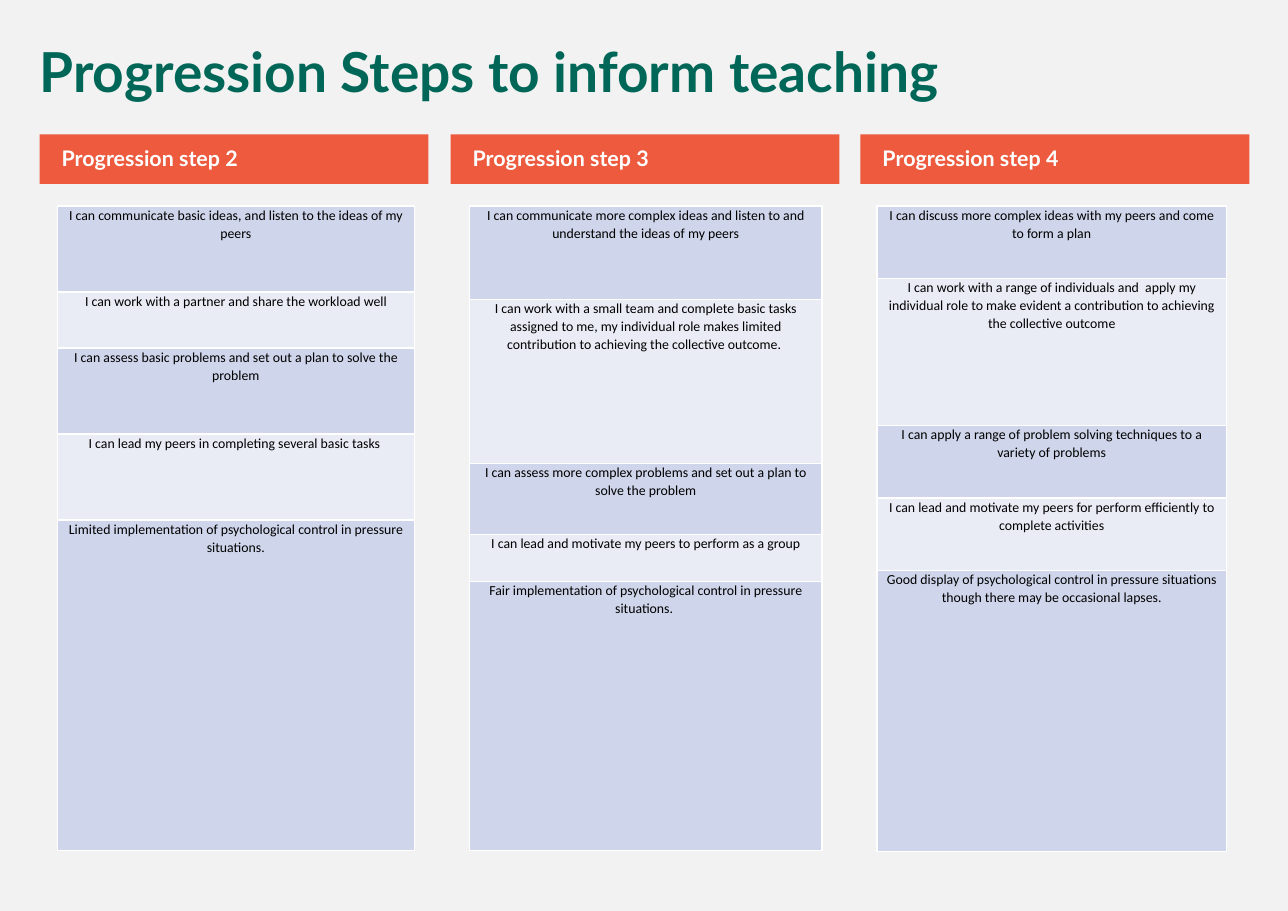
from dataclasses import dataclass

from lxml import etree
from pptx import Presentation
from pptx.dml.color import RGBColor
from pptx.enum.shapes import MSO_SHAPE
from pptx.enum.text import MSO_ANCHOR, PP_ALIGN
from pptx.oxml.ns import qn
from pptx.slide import Slide
from pptx.table import _Cell
from pptx.text.text import _Paragraph
from pptx.util import Inches, Pt

RECTANGLE = MSO_SHAPE.RECTANGLE
TOP, MIDDLE = MSO_ANCHOR.TOP, MSO_ANCHOR.MIDDLE
LEFT, CENTER = PP_ALIGN.LEFT, PP_ALIGN.CENTER

COLORS = {
    "page": "F2F2F2",
    "title": "006758",
    "header": "ED5A3E",
    "white": "FFFFFF",
    "black": "000000",
    "odd_row": "CFD5EA",
    "even_row": "E9EBF5",
}
HEADER_TOP, HEADER_WIDTH, HEADER_HEIGHT = 1.22, 3.53, 0.45
TABLE_TOP = 1.87


@dataclass
class Statement:
    text: str
    height: float


@dataclass
class Step:
    heading: str
    header_left: float
    table_left: float
    table_width: float
    statements: list[Statement]


STEPS = [
    Step("Progression step 2", 0.36, 0.52, 3.24, [
        Statement("I can communicate basic ideas, and listen to the ideas of my peers", 0.78),
        Statement("I can work with a partner and share the workload well", 0.51),
        Statement("I can assess basic problems and set out a plan to solve the problem", 0.78),
        Statement("I can lead my peers in completing several basic tasks ", 0.78),
        Statement("Limited implementation of psychological control in pressure situations.", 3),
    ]),
    Step("Progression step 3", 4.09, 4.26, 3.2, [
        Statement("I can communicate more complex ideas and listen to and understand "
                  "the ideas of my peers", 0.85),
        Statement("I can work with a small team and complete basic tasks assigned to me, "
                  "my individual role makes limited contribution to achieving the "
                  "collective outcome. ", 1.49),
        Statement("I can assess more complex problems and set out a plan to solve the problem", 0.64),
        Statement("I can lead and motivate my peers to perform as a group", 0.43),
        Statement("Fair implementation of psychological control in pressure situations. ", 2.44),
    ]),
    Step("Progression step 4", 7.81, 7.96, 3.17, [
        Statement("I can discuss more complex ideas with my peers and come to form a plan", 0.66),
        Statement("I can work with a range of individuals and  apply my individual role to make "
                  "evident a contribution to achieving the collective outcome", 1.33),
        Statement("I can apply a range of problem solving techniques to a variety of problems", 0.66),
        Statement("I can lead and motivate my peers for perform efficiently to complete activities", 0.66),
        Statement("Good display of psychological control in pressure situations though there "
                  "may be occasional lapses.", 2.55),
    ]),
]


def color(name: str) -> RGBColor:
    return RGBColor.from_string(COLORS[name])


def add_span(para: _Paragraph, text: str, font: str, size: float, ink: str,
             bold: bool = False) -> None:
    span = para.add_run()
    span.text = text
    span.font.name = font
    span.font.size = Pt(size)
    span.font.bold = bold
    span.font.color.rgb = color(ink)


def add_title(page: Slide, text: str) -> None:
    box = page.shapes.add_textbox(Inches(0.26), Inches(0.36), Inches(11.08), Inches(0.65))
    frame = box.text_frame
    frame.word_wrap = True
    frame.vertical_anchor = TOP
    para = frame.paragraphs[0]
    para.line_spacing = 0.9
    add_span(para, text, "Lato", 36, "title", bold=True)


def add_header(page: Slide, step: Step) -> None:
    box = page.shapes.add_shape(RECTANGLE, Inches(step.header_left), Inches(HEADER_TOP),
                                Inches(HEADER_WIDTH), Inches(HEADER_HEIGHT))
    box.shadow.inherit = False
    box.fill.solid()
    box.fill.fore_color.rgb = color("header")
    box.line.fill.background()
    frame = box.text_frame
    frame.word_wrap = True
    frame.vertical_anchor = MIDDLE
    frame.margin_left = Inches(0.2)
    para = frame.paragraphs[0]
    para.alignment = LEFT
    para.line_spacing = 0.9
    add_span(para, step.heading, "Lato", 14, "white", bold=True)


def add_borders(cell: _Cell) -> None:
    """Draw a thin white line on all four sides, ahead of the cell's fill."""
    properties = cell._tc.get_or_add_tcPr()
    for position, side in enumerate(("lnL", "lnR", "lnT", "lnB")):
        line = etree.Element(qn(f"a:{side}"), w=str(Pt(1)))
        fill = etree.SubElement(line, qn("a:solidFill"))
        etree.SubElement(fill, qn("a:srgbClr"), val=COLORS["white"])
        properties.insert(position, line)


def fill_cell(cell: _Cell, text: str, background: str) -> None:
    cell.fill.solid()
    cell.fill.fore_color.rgb = color(background)
    add_borders(cell)
    cell.margin_left = cell.margin_right = Inches(0.07)
    cell.margin_top = cell.margin_bottom = 0
    cell.vertical_anchor = TOP
    para = cell.text_frame.paragraphs[0]
    para.alignment = CENTER
    para.line_spacing = 1.07
    para.space_after = Pt(8)
    add_span(para, text, "Calibri", 9, "black")


def add_statements(page: Slide, step: Step) -> None:
    total = sum(statement.height for statement in step.statements)
    table = page.shapes.add_table(len(step.statements), 1, Inches(step.table_left),
                                  Inches(TABLE_TOP), Inches(step.table_width),
                                  Inches(total)).table
    table.first_row = False
    table.horz_banding = False
    for index, statement in enumerate(step.statements):
        table.rows[index].height = Inches(statement.height)
        background = "even_row" if index % 2 else "odd_row"
        fill_cell(table.cell(index, 0), statement.text, background)


def main() -> None:
    deck = Presentation()
    deck.slide_width, deck.slide_height = Inches(11.69), Inches(8.27)
    page = deck.slides.add_slide(deck.slide_layouts[6])
    page.background.fill.solid()
    page.background.fill.fore_color.rgb = color("page")
    add_title(page, "Progression Steps to inform teaching")
    for step in STEPS:
        add_header(page, step)
        add_statements(page, step)
    deck.save("out.pptx")


if __name__ == "__main__":
    main()
